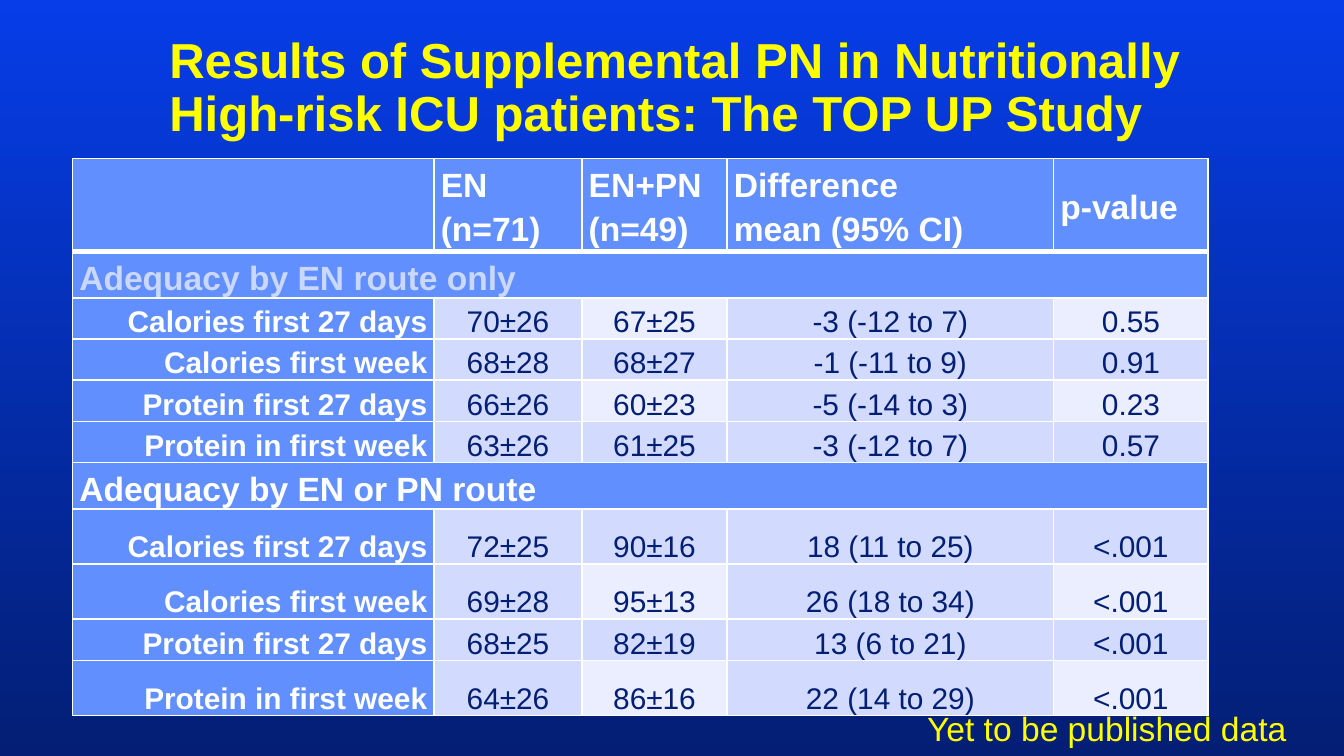
from dataclasses import dataclass

from lxml.etree import SubElement
from pptx import Presentation
from pptx.dml.color import RGBColor
from pptx.enum.text import MSO_ANCHOR, PP_ALIGN
from pptx.oxml.ns import qn
from pptx.util import Inches, Pt


@dataclass(frozen=True)
class Theme:
    font: str = "Arial"
    top: str = "063DE8"
    base: str = "031E74"
    accent: str = "FFFF00"
    head: str = "618FFD"
    band: str = "D2DBFE"
    light: str = "EAEEFF"
    white: str = "FFFFFF"
    pale: str = "CAD7FE"
    ink: str = "031F74"
    title: float = 26.3
    large: int = 18
    small: int = 16


THEME = Theme()
WIDTH = 10
HEIGHT = WIDTH * 9 / 16
COLS = [2.69, 1.1, 1.08, 2.43, 1.15]
ROWS = [0.62, 0.29] + [0.22] * 5 + [0.41, 0.41, 0.22, 0.41]
DATA = [
    ["", "EN \n(n=71)", "EN+PN\n(n=49)", "Difference\nmean (95% CI)", "p-value"],
    ["Adequacy by EN route only"],
    ["Calories first 27 days", "70±26", "67±25", "-3 (-12 to 7)", "0.55"],
    ["Calories first week", "68±28", "68±27", "-1 (-11 to 9)", "0.91"],
    ["Protein first 27 days", "66±26", "60±23", "-5 (-14 to 3)", "0.23"],
    ["Protein in first week", "63±26", "61±25", "-3 (-12 to 7)", "0.57"],
    ["Adequacy by EN or PN route"],
    ["Calories first 27 days", "72±25", "90±16", "18 (11 to 25)", "<.001"],
    ["Calories first week", "69±28", "95±13", "26 (18 to 34)", "<.001"],
    ["Protein first 27 days", "68±25", "82±19", "13 (6 to 21)", "<.001"],
    ["Protein in first week", "64±26", "86±16", "22 (14 to 29)", "<.001"],
]


def apply(item, values):
    for name, value in values.items():
        setattr(item, name, value)


def write(frame, text, size, color, bold=False, align=PP_ALIGN.LEFT, space=1.0):
    para = frame.paragraphs[0]
    para.text = text
    apply(para, {"alignment": align, "line_spacing": space})
    # The paragraph font also sizes cells without text
    for font in [para.font] + [run.font for run in para.runs]:
        apply(font, {"name": THEME.font, "size": Pt(size), "bold": bold})
        font.color.rgb = RGBColor.from_string(color)


def add_text(slide, box, text, size, form, **style):
    frame = slide.shapes.add_textbox(*map(Inches, box)).text_frame
    apply(frame, {"word_wrap": True, **form})
    write(frame, text, size, THEME.accent, **style)


def add_title(slide, box):
    form = {"vertical_anchor": MSO_ANCHOR.MIDDLE, "margin_left": Inches(0.49)}
    text = ("Results of Supplemental PN in Nutritionally "
            "High-risk ICU patients: The TOP UP Study")
    add_text(slide, box, text, THEME.title, form, bold=True, space=0.9)


def add_note(slide, box):
    add_text(slide, box, "Yet to be published data", THEME.large, {})


def edge(cell, row):
    # Thick rule between the header and the body
    widths = {"L": 1, "R": 1, "T": 3 if row == 1 else 1, "B": 3 if row == 0 else 1}
    props = cell._tc.get_or_add_tcPr()
    for side, width in widths.items():
        line = SubElement(props, qn(f"a:ln{side}"), w=str(Pt(width)))
        fill = SubElement(line, qn("a:solidFill"))
        SubElement(fill, qn("a:srgbClr"), val=THEME.white)


def style(row, col, group):
    """Return the fill and the text format of one cell."""
    if row == 0 or group:
        color = THEME.pale if row == 1 else THEME.white
        return THEME.head, {"size": THEME.large, "color": color, "bold": True}
    if col == 0:
        return THEME.head, {"size": THEME.small, "color": THEME.white,
                            "bold": True, "align": PP_ALIGN.RIGHT}
    fill = THEME.light if row % 2 == 0 and col % 2 == 0 else THEME.band
    return fill, {"size": THEME.small, "color": THEME.ink,
                  "align": PP_ALIGN.CENTER}


def add_grid(slide, box):
    table = slide.shapes.add_table(len(ROWS), len(COLS), *map(Inches, box)).table
    for col, width in zip(table.columns, COLS):
        col.width = Inches(width)
    for row, height in zip(table.rows, ROWS):
        row.height = Inches(height)

    for row, texts in enumerate(DATA):
        group = len(texts) == 1
        for col in range(len(COLS)):
            cell = table.cell(row, col)
            apply(cell, {
                "margin_left": Inches(0.05), "margin_right": Inches(0.05),
                "margin_top": 0, "margin_bottom": 0,
                "vertical_anchor": MSO_ANCHOR.BOTTOM if row else MSO_ANCHOR.MIDDLE,
            })
            edge(cell, row)
            fill, form = style(row, col, group)
            cell.fill.solid()
            cell.fill.fore_color.rgb = RGBColor.from_string(fill)
            text = texts[col] if col < len(texts) else ""
            write(cell.text_frame, text, space=1.15, **form)
        if group:
            table.cell(row, 0).merge(table.cell(row, len(COLS) - 1))


def add_back(slide):
    fill = slide.background.fill
    fill.gradient()
    fill.gradient_angle = 270
    for stop, color in zip(fill.gradient_stops, (THEME.top, THEME.base)):
        stop.color.rgb = RGBColor.from_string(color)


def main():
    deck = Presentation()
    apply(deck, {"slide_width": Inches(WIDTH), "slide_height": Inches(HEIGHT)})
    slide = deck.slides.add_slide(deck.slide_layouts[6])
    add_back(slide)
    add_title(slide, (0.77, 0.19, 8.5, 0.94))
    add_note(slide, (6.8, 5.22, 3.2, 0.71))
    add_grid(slide, (0.54, 1.18, sum(COLS), sum(ROWS)))
    deck.save("out.pptx")


if __name__ == "__main__":
    main()
